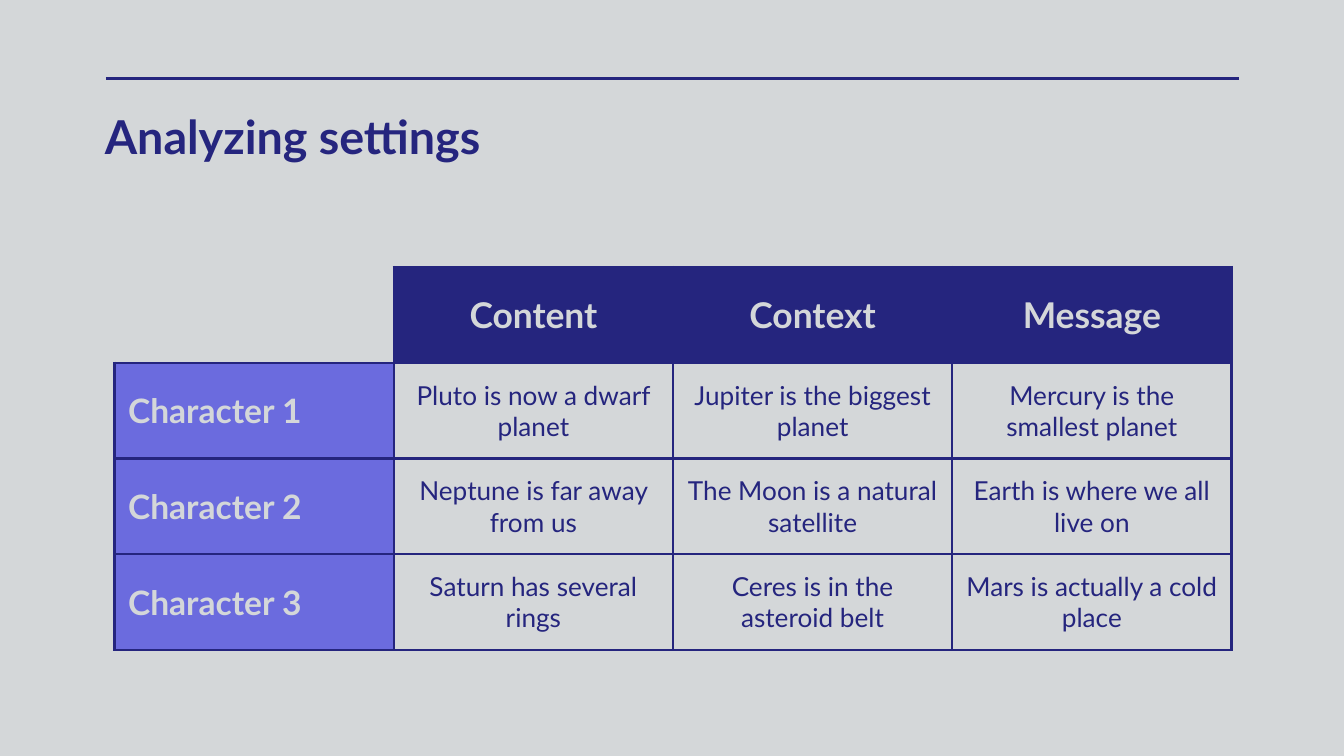
"""Build the slide that analyzes settings by character."""
from dataclasses import dataclass
from typing import Optional

from lxml.etree import SubElement as Sub
from pptx import Presentation
from pptx.dml.color import RGBColor as Rgb
from pptx.enum.shapes import MSO_CONNECTOR as Conn
from pptx.enum.text import MSO_ANCHOR as Anchor, PP_ALIGN as Align
from pptx.oxml.ns import qn
from pptx.util import Pt


@dataclass(frozen=True)
class Theme:
    font: str = "Lato"
    navy: str = "25257E"
    lilac: str = "6B6BDE"
    pale: str = "D4D7D9"
    title: float = 25
    head: float = 19
    side: float = 18
    body: float = 14
    line: float = 1.5
    pad: float = 7.2


@dataclass(frozen=True)
class Style:
    size: float
    ink: str
    bold: bool
    align: Align
    fill: Optional[str] = None


THEME = Theme()
TITLE = Style(THEME.title, THEME.navy, True, Align.LEFT)
HEAD = Style(THEME.head, THEME.pale, True, Align.CENTER, THEME.navy)
SIDE = Style(THEME.side, THEME.pale, True, Align.LEFT, THEME.lilac)
BODY = Style(THEME.body, THEME.navy, False, Align.CENTER)

ROWS = [
    ["", "Content", "Context", "Message"],
    ["Character 1", "Pluto is now a dwarf planet",
     "Jupiter is the biggest planet", "Mercury is the smallest planet"],
    ["Character 2", "Neptune is far away from us",
     "The Moon is a natural satellite", "Earth is where we all live on"],
    ["Character 3", "Saturn has several rings",
     "Ceres is in the asteroid belt", "Mars is actually a cold place"],
]


def write(frame, text: str, style: Style, pad: float) -> None:
    frame.word_wrap = True
    frame.margin_left = frame.margin_right = Pt(pad)
    frame.margin_top = frame.margin_bottom = Pt(pad)
    para = frame.paragraphs[0]
    para.text = text
    para.alignment = style.align
    font = para.font
    font.name, font.size, font.bold = THEME.font, Pt(style.size), style.bold
    font.color.rgb = Rgb.from_string(style.ink)


def edge(cell, sides: str) -> None:
    props = cell._tc.get_or_add_tcPr()
    for side in "LRTB":
        line = Sub(props, qn(f"a:ln{side}"), w=str(Pt(THEME.line)))
        if side in sides:
            fill = Sub(line, qn("a:solidFill"))
            Sub(fill, qn("a:srgbClr"), val=THEME.navy)
        else:
            Sub(line, qn("a:noFill"))


def paint(cell, text: str, style: Style, sides: str) -> None:
    edge(cell, sides)
    if style.fill:
        cell.fill.solid()
        cell.fill.fore_color.rgb = Rgb.from_string(style.fill)
    else:
        cell.fill.background()
    cell.vertical_anchor = Anchor.MIDDLE
    if text:
        write(cell.text_frame, text, style, THEME.pad)
        cell.margin_left = cell.margin_right = Pt(THEME.pad)
        cell.margin_top = cell.margin_bottom = Pt(THEME.pad)


def grid(slide, left: float, top: float, wide: float, high: float) -> None:
    count, span = len(ROWS), len(ROWS[0])
    table = slide.shapes.add_table(
        count, span, Pt(left), Pt(top), Pt(wide * span), Pt(high * count)).table
    table.first_row = table.horz_banding = False
    for col in table.columns:
        col.width = Pt(wide)
    for i, row in enumerate(ROWS):
        table.rows[i].height = Pt(high)
        for j, text in enumerate(row):
            style = BODY if not text else HEAD if i == 0 else SIDE if j == 0 else BODY
            paint(table.cell(i, j), text, style, "LRTB" if text else "RB")


def rule(slide, left: float, right: float, top: float) -> None:
    line = slide.shapes.add_connector(
        Conn.STRAIGHT, Pt(left), Pt(top), Pt(right), Pt(top))
    line.line.color.rgb = Rgb.from_string(THEME.navy)
    line.line.width = Pt(THEME.line)
    Sub(line._element.spPr, qn("a:effectLst"))


def main() -> None:
    deck = Presentation()
    deck.slide_width, deck.slide_height = Pt(720), Pt(405)
    slide = deck.slides.add_slide(deck.slide_layouts[6])
    back = slide.background.fill
    back.solid()
    back.fore_color.rgb = Rgb.from_string(THEME.pale)
    rule(slide, 56.7, 664, 41.9)
    box = slide.shapes.add_textbox(Pt(56.2), Pt(57.6), Pt(607.6), Pt(32.4))
    write(box.text_frame, "Analyzing settings", TITLE, 0)
    grid(slide, 61.4, 143.1, 149.6, 51.3)
    deck.save("out.pptx")


if __name__ == "__main__":
    main()
